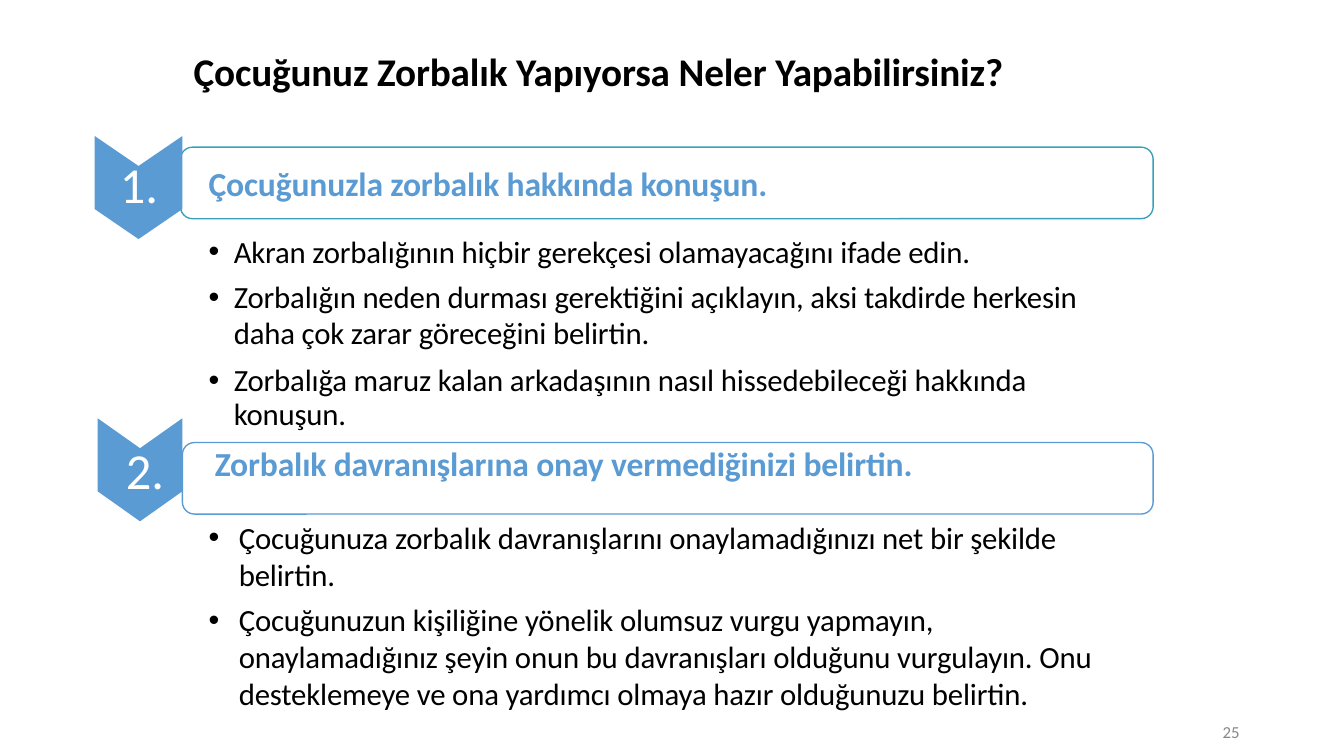
import pptx
import pptx.util
import pptx.dml.color
import pptx.enum.shapes
import pptx.enum.text
import lxml.etree

Pt = pptx.util.Pt
BLUE = pptx.dml.color.RGBColor(0x5B, 0x9B, 0xD4)
TEAL = pptx.dml.color.RGBColor(0x39, 0xA0, 0xB9)
BLACK = pptx.dml.color.RGBColor(0, 0, 0)
WHITE = pptx.dml.color.RGBColor(0xFF, 0xFF, 0xFF)
GRAY = pptx.dml.color.RGBColor(0x88, 0x88, 0x88)

presentation = pptx.Presentation()
presentation.slide_width = Pt(960)
presentation.slide_height = Pt(540)
slide = presentation.slides.add_slide(presentation.slide_layouts[6])


def add_text(left, top, width, height, lines, size, color, bold=False, wrap=False):
    text_box = slide.shapes.add_textbox(Pt(left), Pt(top), Pt(width), Pt(height))
    frame = text_box.text_frame
    frame.margin_left = frame.margin_right = frame.margin_bottom = 0
    frame.margin_top = Pt(1)
    frame.word_wrap = wrap
    frame.vertical_anchor = pptx.enum.text.MSO_ANCHOR.TOP
    frame.text = "\n".join(lines)
    for paragraph in frame.paragraphs:
        for run in paragraph.runs:
            run.font.name = "Calibri"
            run.font.size = Pt(size)
            run.font.bold = bold
            run.font.color.rgb = color
            run.font._element.set("spc", "-10")
    return frame


def add_bullets(frame, indent, hanging):
    for paragraph in frame.paragraphs:
        properties = paragraph._p.get_or_add_pPr()
        properties.set("marL", str(Pt(indent)))
        properties.set("indent", str(-Pt(hanging)))
        namespace = "{http://schemas.openxmlformats.org/drawingml/2006/main}"
        lxml.etree.SubElement(properties, namespace + "buFont").set("typeface", "Arial")
        lxml.etree.SubElement(properties, namespace + "buChar").set("char", "•")


add_text(138.3, 33.1, 586.8, 35.3, ["Çocuğunuz Zorbalık Yapıyorsa Neler Yapabilirsiniz?"],
         28, BLACK, bold=True)

sections = [
    ("1.", "Çocuğunuzla zorbalık hakkında konuşun.", TEAL,
     (128.9, 105.1), (67.7, 97.2), (85.7, 108.7), (149, 115.2)),
    ("2.", "Zorbalık davranışlarına onay vermediğinizi belirtin.", BLUE,
     (130.3, 316.1), (69.8, 298.8), (90, 312.5), (153.4, 315.4)),
]
box_right, box_height, corner_radius = 823.7, 51.1, 8.6
chevron_right, chevron_height, chevron_notch = 130.3, 73.6, 21.4

for number, heading, outline, box, chevron, number_place, heading_place in sections:
    frame_box = slide.shapes.add_shape(
        pptx.enum.shapes.MSO_SHAPE.ROUNDED_RECTANGLE,
        Pt(box[0]), Pt(box[1]), Pt(box_right - box[0]), Pt(box_height))
    frame_box.adjustments[0] = corner_radius / box_height
    frame_box.shadow.inherit = False
    frame_box.fill.background()
    frame_box.line.color.rgb = outline
    frame_box.line.width = Pt(0.96)

    left, top = chevron
    middle = (left + chevron_right) / 2
    bottom = top + chevron_height
    outline_points = [
        (middle, top + chevron_notch), (left, top), (left, bottom - chevron_notch),
        (middle, bottom), (chevron_right, bottom - chevron_notch)]
    builder = slide.shapes.build_freeform(Pt(chevron_right), Pt(top))
    builder.add_line_segments([(Pt(x), Pt(y)) for x, y in outline_points], close=True)
    arrow = builder.convert_to_shape()
    arrow.shadow.inherit = False
    arrow.fill.solid()
    arrow.fill.fore_color.rgb = BLUE
    arrow.line.fill.background()

    add_text(*number_place, 29.5, 45.4, [number], 36, WHITE)
    add_text(*heading_place, 506, 31, [heading], 24, BLUE, bold=True)

talk = add_text(148.3, 157.7, 630, 150.5, [
    "Akran zorbalığının hiçbir gerekçesi olamayacağını ifade edin.",
    "Zorbalığın neden durması gerektiğini açıklayın, aksi takdirde herkesin "
    "daha çok zarar göreceğini belirtin.",
    "Zorbalığa maruz kalan arkadaşının nasıl hissedebileceği hakkında konuşun.",
], 22, BLACK, wrap=True)
talk.margin_top = Pt(8.6)
add_bullets(talk, 18.7, 18)
for paragraph, spacing, before in zip(talk.paragraphs[1:], (25.1, 23.8), (7.3, 10.3)):
    paragraph.line_spacing = Pt(spacing)
    paragraph.space_before = Pt(before)

disapprove = add_text(148.3, 369.4, 640, 140.4, [
    "Çocuğunuza zorbalık davranışlarını onaylamadığınızı net bir şekilde belirtin.",
    "Çocuğunuzun kişiliğine yönelik olumsuz vurgu yapmayın, onaylamadığınız şeyin "
    "onun bu davranışları olduğunu vurgulayın. Onu desteklemeye ve ona yardımcı "
    "olmaya hazır olduğunuzu belirtin.",
], 22, BLACK, wrap=True)
add_bullets(disapprove, 22.3, 21.6)
disapprove.paragraphs[1].space_before = Pt(6)

add_text(873.4, 514.8, 14.4, 16.6, ["25"], 12, GRAY)

presentation.save("out.pptx")
